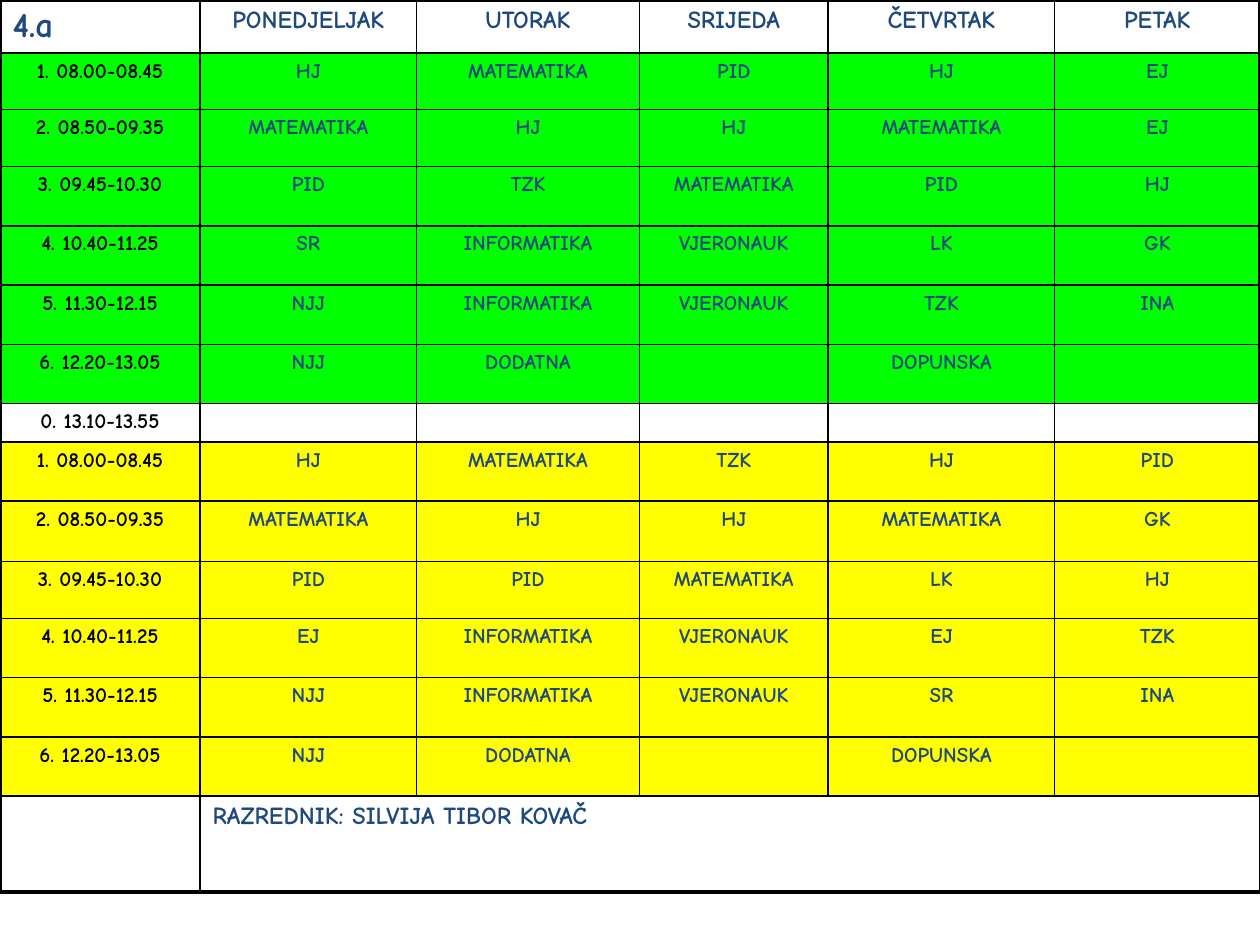
from dataclasses import dataclass

from lxml import etree
from pptx import Presentation
from pptx import util as u
from pptx.dml.color import RGBColor
from pptx.enum import text
from pptx.oxml import ns


@dataclass(frozen=True)
class Theme:
    font: str = "Comic Neue"
    ink: str = "1F497D"
    hours: str = "000000"
    line: str = "000000"
    first_shift: str = "00FF00"
    second_shift: str = "FFFF00"
    class_size: int = 20
    heading_size: int = 14
    lesson_size: int = 12
    thin: float = 1
    thick: float = 2.25


THEME = Theme()
COLUMNS = [1.59, 1.72, 1.77, 1.5, 1.8, 1.63]
ROWS = [0.41, 0.45, 0.45, 0.47, 0.47, 0.47, 0.47, 0.28,
        0.47, 0.48, 0.45, 0.47, 0.47, 0.47, 0.76]
HEADINGS = ["4.a", "PONEDJELJAK", "UTORAK", "SRIJEDA", "ČETVRTAK", "PETAK"]
HOURS = ["1. 08.00-08.45", "2. 08.50-09.35", "3. 09.45-10.30",
         "4. 10.40-11.25", "5. 11.30-12.15", "6. 12.20-13.05"]
BREAK = ["0. 13.10-13.55", "", "", "", "", ""]
FIRST_SHIFT = [
    ["HJ", "MATEMATIKA", "PID", "HJ", "EJ"],
    ["MATEMATIKA", "HJ", "HJ", "MATEMATIKA", "EJ"],
    ["PID", "TZK", "MATEMATIKA", "PID", "HJ"],
    ["SR", "INFORMATIKA", "VJERONAUK", "LK", "GK"],
    ["NJJ", "INFORMATIKA", "VJERONAUK", "TZK", "INA"],
    ["NJJ", "DODATNA", "", "DOPUNSKA", ""],
]
SECOND_SHIFT = [
    ["HJ", "MATEMATIKA", "TZK", "HJ", "PID"],
    ["MATEMATIKA", "HJ", "HJ", "MATEMATIKA", "GK"],
    ["PID", "PID", "MATEMATIKA", "LK", "HJ"],
    ["EJ", "INFORMATIKA", "VJERONAUK", "EJ", "TZK"],
    ["NJJ", "INFORMATIKA", "VJERONAUK", "SR", "INA"],
    ["NJJ", "DODATNA", "", "DOPUNSKA", ""],
]
FOOTER = ["", "RAZREDNIK: SILVIJA TIBOR KOVAČ", "", "", "", ""]


def write_cell(cell, words, size, color, centred=True):
    para = cell.text_frame.paragraphs[0]
    if centred:
        para.alignment = text.PP_ALIGN.CENTER
    if not words:
        ending = etree.SubElement(para._p, ns.qn("a:endParaRPr"))
        ending.set("sz", str(size * 100))
        return
    span = para.add_run()
    span.text = words
    span.font.name = THEME.font
    span.font.size = u.Pt(size)
    span.font.bold = True
    span.font.color.rgb = RGBColor.from_string(color)


def fill_cell(cell, color):
    if color:
        cell.fill.solid()
        cell.fill.fore_color.rgb = RGBColor.from_string(color)
    else:
        cell.fill.background()


def border_cell(cell, row, column):
    outer = {"L": column == 0, "R": column == len(COLUMNS) - 1,
             "T": row == 0, "B": row == len(ROWS) - 1}
    properties = cell._tc.get_or_add_tcPr()
    for place, (side, is_outer) in enumerate(outer.items()):
        line = etree.Element(ns.qn(f"a:ln{side}"))
        line.set("w", str(u.Pt(THEME.thick if is_outer else THEME.thin)))
        solid = etree.SubElement(line, ns.qn("a:solidFill"))
        etree.SubElement(solid, ns.qn("a:srgbClr")).set("val", THEME.line)
        properties.insert(place, line)


def share(total, weights):
    return [int(total * weight / sum(weights)) for weight in weights]


def timetable_rows():
    rows = [(HEADINGS, None)]
    rows += [([hour] + lessons, THEME.first_shift)
             for hour, lessons in zip(HOURS, FIRST_SHIFT)]
    rows.append((BREAK, None))
    rows += [([hour] + lessons, THEME.second_shift)
             for hour, lessons in zip(HOURS, SECOND_SHIFT)]
    rows.append((FOOTER, None))
    return rows


def add_timetable(page, left, top, width, height):
    frame = page.shapes.add_table(len(ROWS), len(COLUMNS), left, top, width, height)
    table = frame.table
    table.first_row = False
    table.horz_banding = False
    for column, size in zip(table.columns, share(width, COLUMNS)):
        column.width = size
    for row, size in zip(table.rows, share(height, ROWS)):
        row.height = size

    last = len(ROWS) - 1
    for row, (entries, fill) in enumerate(timetable_rows()):
        for column, words in enumerate(entries):
            cell = table.cell(row, column)
            size = THEME.heading_size if row in (0, last) else THEME.lesson_size
            if row == column == 0:
                size = THEME.class_size
            is_hour = column == 0 and 0 < row < last
            centred = row != last and (row, column) != (0, 0)
            write_cell(cell, words, size, THEME.hours if is_hour else THEME.ink, centred)
            fill_cell(cell, fill)
            border_cell(cell, row, column)
    table.cell(last, 1).merge(table.cell(last, len(COLUMNS) - 1))


def main():
    deck = Presentation()
    deck.slide_width = u.Inches(10)
    deck.slide_height = u.Inches(7.5)
    page = deck.slides.add_slide(deck.slide_layouts[6])
    add_timetable(page, 0, 0, deck.slide_width, int(deck.slide_height * 0.94))
    deck.save("out.pptx")


if __name__ == "__main__":
    main()
